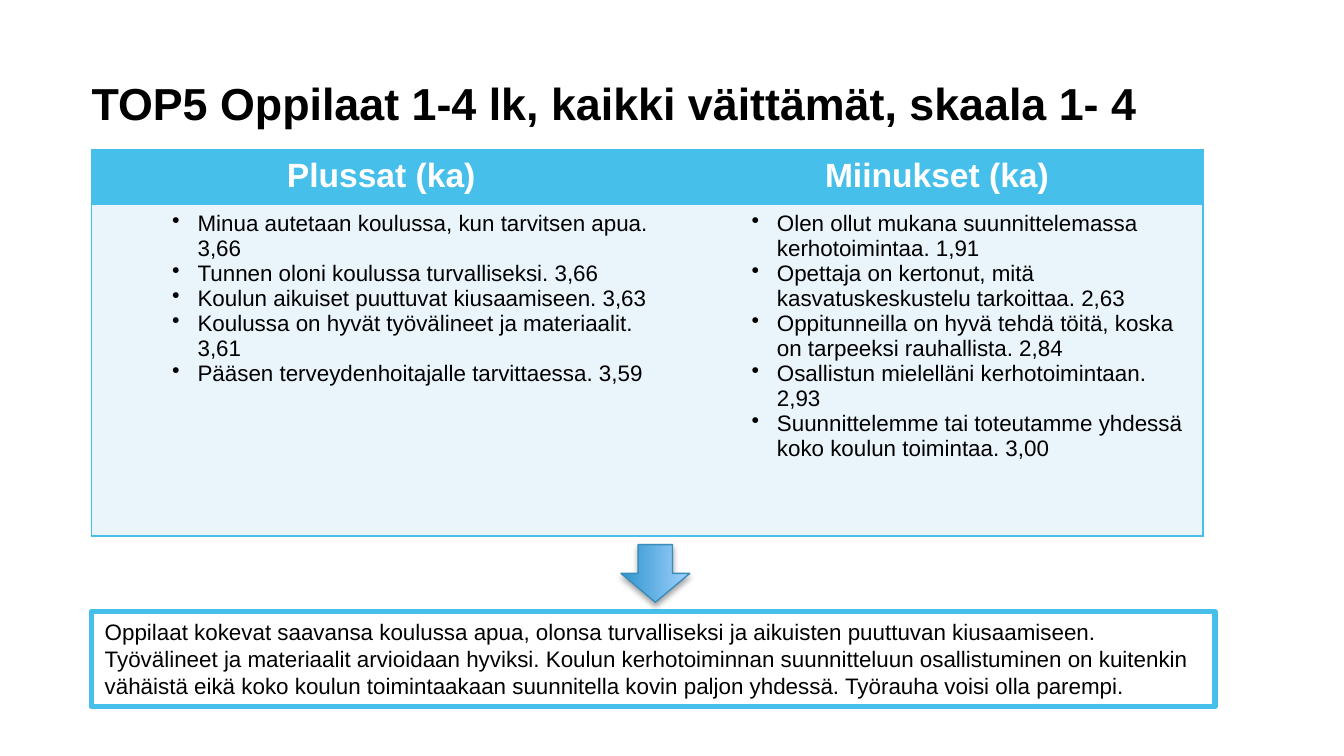
from dataclasses import dataclass

import pptx
import pptx.dml.color
import pptx.enum.shapes
import pptx.enum.text
import pptx.oxml
import pptx.oxml.ns
import pptx.util
from pptx.util import Cm, Pt

SKY, PALE, BLACK, WHITE = "46BFEA", "E9F4FB", "000000", "FFFFFF"
LEFT = Cm(1.73)
SPACE = pptx.oxml.ns.nsdecls("a")
ALIGN = pptx.enum.text.PP_ALIGN
ANCHOR = pptx.enum.text.MSO_ANCHOR
SHAPE = pptx.enum.shapes.MSO_SHAPE


@dataclass
class Column:
    head: str
    width: float
    edges: str
    items: list[str]


COLUMNS = [
    Column("Plussat (ka)", 10.95, "LTB", [
        "Minua autetaan koulussa, kun tarvitsen apua. 3,66",
        "Tunnen oloni koulussa turvalliseksi. 3,66",
        "Koulun aikuiset puuttuvat kiusaamiseen. 3,63",
        "Koulussa on hyvät työvälineet ja materiaalit. 3,61",
        "Pääsen terveydenhoitajalle tarvittaessa. 3,59",
    ]),
    Column("Miinukset (ka)", 10.06, "RTB", [
        "Olen ollut mukana suunnittelemassa kerhotoimintaa. 1,91",
        "Opettaja on kertonut, mitä kasvatuskeskustelu tarkoittaa. 2,63",
        "Oppitunneilla on hyvä tehdä töitä, koska on tarpeeksi rauhallista. 2,84",
        "Osallistun mielelläni kerhotoimintaan. 2,93",
        "Suunnittelemme tai toteutamme yhdessä koko koulun toimintaa. 3,00",
    ]),
]
SUMMARY = (
    "Oppilaat kokevat saavansa koulussa apua, olonsa turvalliseksi ja aikuisten "
    "puuttuvan kiusaamiseen. Työvälineet ja materiaalit arvioidaan hyviksi. Koulun "
    "kerhotoiminnan suunnitteluun osallistuminen on kuitenkin vähäistä eikä koko "
    "koulun toimintaakaan suunnitella kovin paljon yhdessä. Työrauha voisi olla parempi."
)


def color(code: str) -> pptx.dml.color.RGBColor:
    return pptx.dml.color.RGBColor.from_string(code)


def apply(target, values: dict) -> None:
    for name, value in values.items():
        setattr(target, name, value)


def paint(fill, code: str) -> None:
    fill.solid()
    fill.fore_color.rgb = color(code)


def write(frame, lines: list[str], size: float, code: str = BLACK,
          bold: bool = False, **form) -> None:
    """Fill a text frame, one paragraph per line; form holds paragraph values."""
    for index, line in enumerate(lines):
        para = frame.add_paragraph() if index else frame.paragraphs[0]
        apply(para, form)
        run = para.add_run()
        run.text = line
        apply(run.font, {"name": "Arial", "size": Pt(size), "bold": bold})
        run.font.color.rgb = color(code)


def bullet(para) -> None:
    props = para._p.get_or_add_pPr()
    props.set("marL", str(Cm(1.75)))
    props.set("indent", str(-Cm(0.48)))
    props.append(pptx.oxml.parse_xml(f'<a:buChar {SPACE} char="•"/>'))


def border(cell, edges: str) -> None:
    """Draw the named edges and clear the others."""
    props = cell._tc.get_or_add_tcPr()
    for side in "LRTB":
        fill = (f'<a:solidFill><a:srgbClr val="{SKY}"/></a:solidFill>'
                if side in edges else "<a:noFill/>")
        props.append(pptx.oxml.parse_xml(
            f'<a:ln{side} {SPACE} w="{Pt(1)}">{fill}</a:ln{side}>'))


def add_title(slide) -> None:
    title = slide.shapes.title
    apply(title, {"left": LEFT, "top": Cm(0.48), "width": Cm(22.76), "height": Cm(1.96)})
    frame = title.text_frame
    apply(frame, {"margin_left": 0, "margin_top": 0, "margin_right": Cm(0.25),
                  "margin_bottom": 0, "vertical_anchor": ANCHOR.BOTTOM,
                  "word_wrap": True, "auto_size": pptx.enum.text.MSO_AUTO_SIZE.NONE})
    write(frame, ["TOP5 Oppilaat 1-4 lk, kaikki väittämät, skaala 1- 4"], 24,
          bold=True, alignment=ALIGN.LEFT, line_spacing=Pt(33))


def add_grid(slide) -> None:
    heights = [Cm(1.02), Cm(6.27)]
    width = sum(Cm(col.width) for col in COLUMNS)
    table = slide.shapes.add_table(2, len(COLUMNS), LEFT, Cm(2.84),
                                   width, sum(heights)).table
    for row, height in zip(table.rows, heights):
        row.height = height
    for index, col in enumerate(COLUMNS):
        table.columns[index].width = Cm(col.width)
        head, body = table.cell(0, index), table.cell(1, index)
        for cell, code in ((head, SKY), (body, PALE)):
            border(cell, col.edges)
            paint(cell.fill, code)
        write(head.text_frame, [col.head], 18, WHITE, True, alignment=ALIGN.CENTER)
        write(body.text_frame, col.items, 12, level=1, line_spacing=Pt(13.4))
        for para in body.text_frame.paragraphs:
            bullet(para)


def add_box(slide) -> None:
    box = slide.shapes.add_shape(SHAPE.RECTANGLE, LEFT, Cm(11.56), Cm(21.23), Cm(1.8))
    box.shadow.inherit = False
    paint(box.fill, WHITE)
    paint(box.line.fill, SKY)
    box.line.width = Pt(3)
    apply(box.text_frame, {"word_wrap": True, "vertical_anchor": ANCHOR.TOP})
    write(box.text_frame, [SUMMARY], 12, alignment=ALIGN.LEFT, line_spacing=Pt(14.5))


def add_arrow(slide) -> None:
    arrow = slide.shapes.add_shape(SHAPE.RIGHT_ARROW, Cm(11.84), Cm(10.19),
                                   Cm(1.09), Cm(1.3))
    arrow.rotation = 90
    arrow.fill.gradient()
    arrow.fill.gradient_angle = 90
    for stop, code in zip(arrow.fill.gradient_stops, ("2E94CD", "A1D2FF")):
        stop.color.rgb = color(code)
    paint(arrow.line.fill, "3C8DBA")
    arrow.line.width = Pt(0.75)
    arrow._element.spPr.append(pptx.oxml.parse_xml(
        f'<a:effectLst {SPACE}><a:outerShdw blurRad="{Pt(3.1)}" dist="{Pt(1.8)}" '
        f'dir="5400000" rotWithShape="0"><a:srgbClr val="{BLACK}">'
        '<a:alpha val="35000"/></a:srgbClr></a:outerShdw></a:effectLst>'))


def main() -> None:
    deck = pptx.Presentation()
    apply(deck, {"slide_width": Cm(25.4), "slide_height": Cm(14.29)})
    slide = deck.slides.add_slide(deck.slide_layouts[5])
    for draw in (add_title, add_grid, add_box, add_arrow):
        draw(slide)
    deck.save("out.pptx")


if __name__ == "__main__":
    main()
